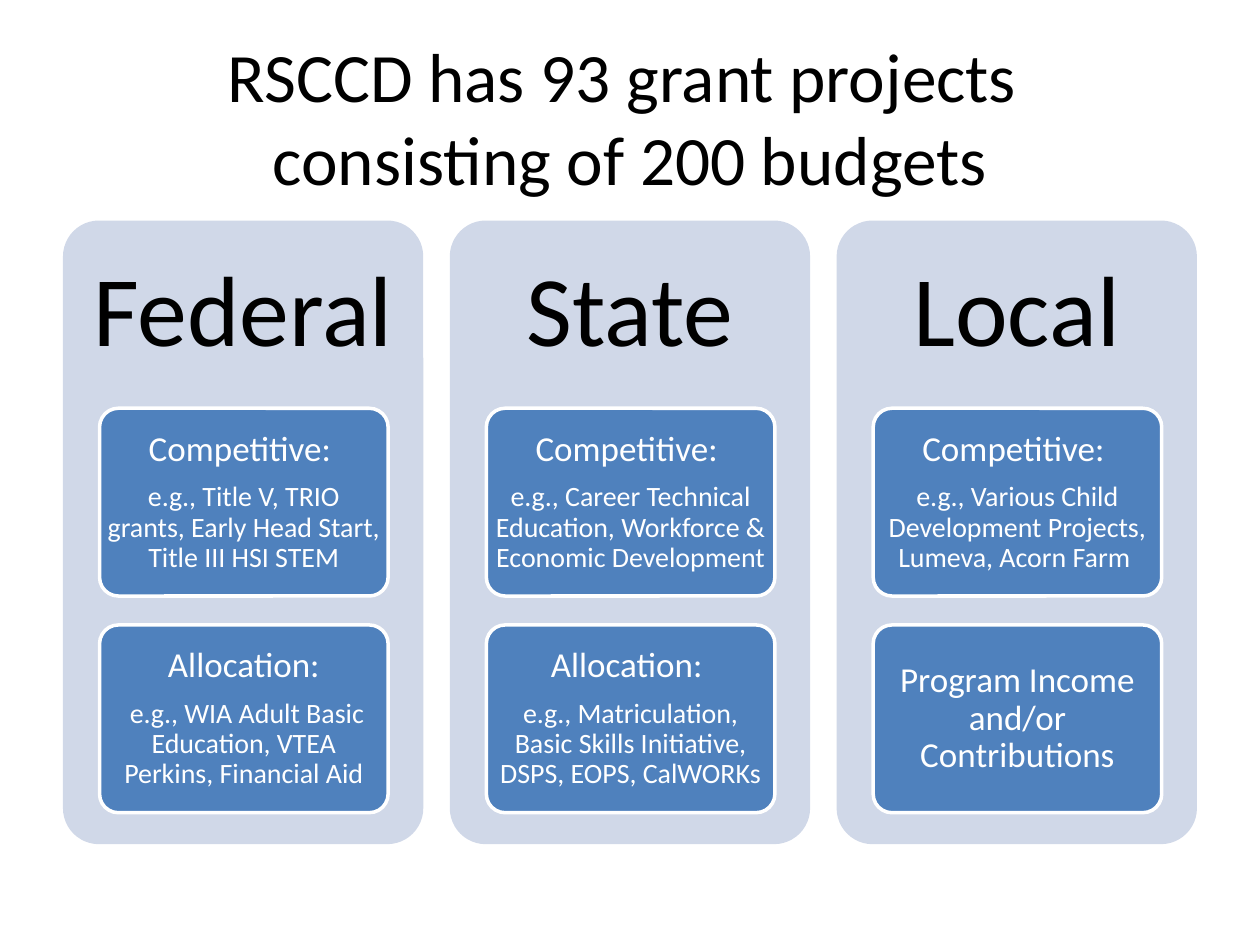
import pptx
import pptx.util
import pptx.dml.color
import pptx.enum.shapes
import pptx.enum.text

Inches, Pt = pptx.util.Inches, pptx.util.Pt
RGBColor = pptx.dml.color.RGBColor
BLACK = RGBColor(0x00, 0x00, 0x00)
WHITE = RGBColor(0xFF, 0xFF, 0xFF)
PANEL = RGBColor(0xD0, 0xD8, 0xE8)
BLUE = RGBColor(0x4F, 0x81, 0xBD)

# Each column: heading, then cards of (heading, examples)
COLUMNS = [
    ("Federal", [
        ("Competitive: ", "e.g., Title V, TRIO grants, Early Head Start, Title III HSI STEM"),
        ("Allocation:", " e.g., WIA Adult Basic Education, VTEA Perkins, Financial Aid"),
    ]),
    ("State", [
        ("Competitive: ", "e.g., Career Technical Education, Workforce & Economic Development"),
        ("Allocation: ", "e.g., Matriculation, Basic Skills Initiative, DSPS, EOPS, CalWORKs"),
    ]),
    ("Local", [
        ("Competitive: ", "e.g., Various Child Development Projects, Lumeva, Acorn Farm "),
        ("Program Income and/or Contributions",),
    ]),
]


def add_panel(x, y, w, h, color):
    sp = s.shapes.add_shape(pptx.enum.shapes.MSO_SHAPE.ROUNDED_RECTANGLE,
                            Inches(x), Inches(y), Inches(w), Inches(h))
    sp.adjustments[0] = 0.1
    sp.shadow.inherit = False
    sp.fill.solid()
    sp.fill.fore_color.rgb = color
    sp.line.fill.background()
    return sp


def set_text(sp, lines, sizes, color, inset_x, inset_y, spacing=0.9):
    tf = sp.text_frame
    tf.word_wrap = True
    tf.vertical_anchor = pptx.enum.text.MSO_ANCHOR.MIDDLE
    tf.margin_left = tf.margin_right = Inches(inset_x)
    tf.margin_top = tf.margin_bottom = Inches(inset_y)
    tf.text = "\n".join(lines)
    for p, size in zip(tf.paragraphs, sizes):
        p.alignment = pptx.enum.text.PP_ALIGN.CENTER
        p.line_spacing = spacing
        p.space_after = Pt(8 if len(lines) > 1 else 0)
        for r in p.runs:
            r.font.name = "Calibri"
            r.font.size = Pt(size)
            r.font.color.rgb = color


prs = pptx.Presentation()
prs.slide_width, prs.slide_height = Inches(10), Inches(7.5)
s = prs.slides.add_slide(prs.slide_layouts[6])

# Title, with a line break inside one paragraph
title = s.shapes.add_textbox(Inches(0.5), Inches(0.3), Inches(9), Inches(1.25))
set_text(title, ["RSCCD has 93 grant projects \vconsisting of 200 budgets"],
         [39.6], BLACK, 0.1, 0.05, spacing=1.0)

# Three funding columns
for col, (heading, cards) in enumerate(COLUMNS):
    x = 0.5 + 3.07 * col
    add_panel(x, 1.75, 2.86, 4.95, PANEL)
    head = s.shapes.add_textbox(Inches(x), Inches(1.75), Inches(2.86), Inches(1.48))
    set_text(head, [heading], [57], BLACK, 0.24, 0.24)

    # Two cards per column
    for row, lines in enumerate(cards):
        card = add_panel(x + 0.29, 3.24 + 1.72 * row, 2.29, 1.49, BLUE)
        card.line.color.rgb = WHITE
        card.line.width = Pt(2)
        set_text(card, lines, [20, 16], WHITE, 0.02, 0)

prs.save("out.pptx")
